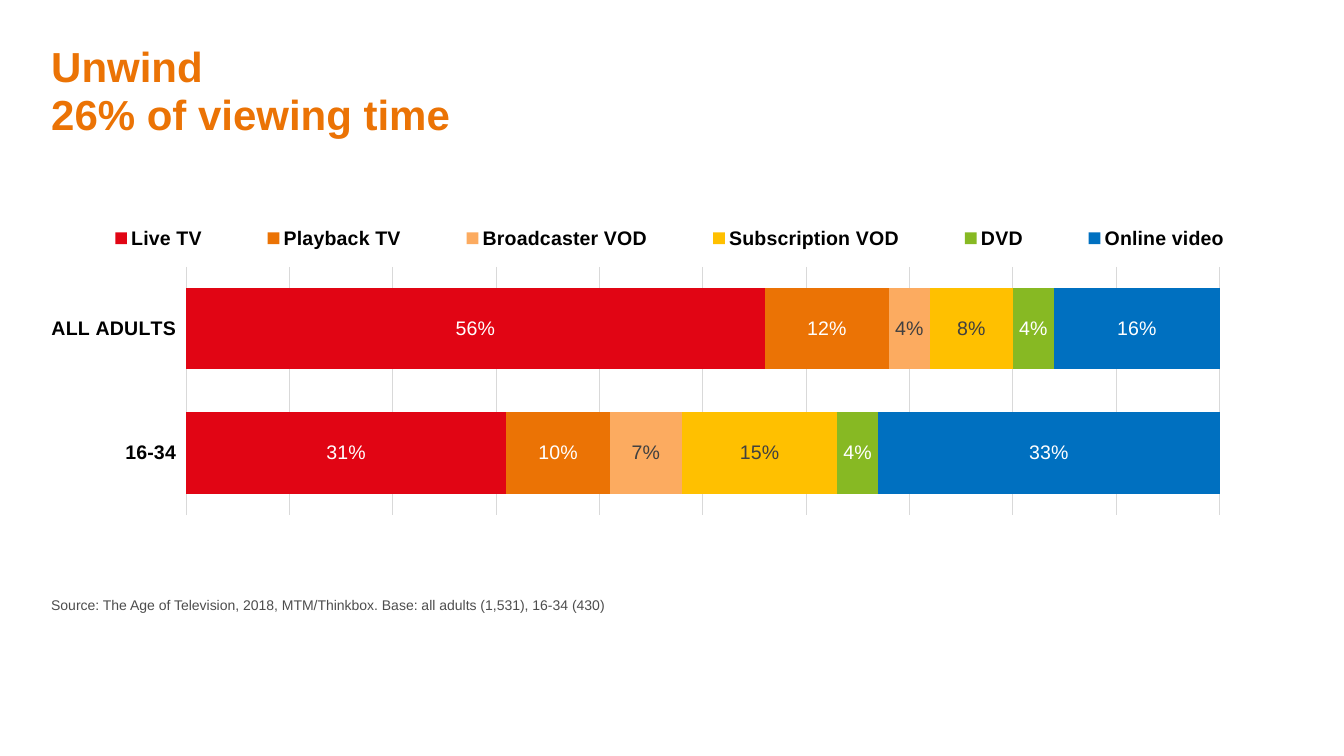
from dataclasses import dataclass

from lxml import etree
from pptx import Presentation
from pptx.chart.data import CategoryChartData
from pptx.dml.color import RGBColor
from pptx.enum.chart import XL_CHART_TYPE, XL_LEGEND_POSITION, XL_TICK_LABEL_POSITION, XL_TICK_MARK
from pptx.enum.text import MSO_ANCHOR
from pptx.oxml.ns import qn
from pptx.util import Inches, Pt

STACKED = XL_CHART_TYPE.BAR_STACKED_100
BOTTOM = XL_LEGEND_POSITION.BOTTOM
LOW = XL_TICK_LABEL_POSITION.LOW
NO_TICK = XL_TICK_MARK.NONE
TOP = MSO_ANCHOR.TOP


@dataclass(frozen=True)
class Theme:
    font: str = "Arial"
    title: str = "EB7305"
    source: str = "4D4D4D"
    black: str = "000000"
    white: str = "FFFFFF"
    dark: str = "404040"
    grid: str = "D9D9D9"
    title_size: int = 30
    chart_size: int = 14
    source_size: int = 10


THEME = Theme()
CATEGORIES = ["16-34", "ALL ADULTS"]
SERIES = [
    ("Live TV", (0.31, 0.56), "E10514", THEME.white),
    ("Playback TV", (0.10, 0.12), "EB7305", THEME.white),
    ("Broadcaster VOD", (0.07, 0.04), "FCAB60", THEME.dark),
    ("Subscription VOD", (0.15, 0.08), "FFC000", THEME.dark),
    ("DVD", (0.04, 0.04), "87B923", THEME.white),
    ("Online video", (0.33, 0.16), "0070C0", THEME.white),
]


def apply(obj, values):
    for name, value in values.items():
        setattr(obj, name, value)


class SlideBuilder:
    def __init__(self, prs, theme):
        self.theme = theme
        self.slide = prs.slides.add_slide(prs.slide_layouts[6])

    def style(self, font, size, color, bold=False):
        apply(font, {"name": self.theme.font, "size": Pt(size), "bold": bold})
        font.color.rgb = RGBColor.from_string(color)

    def line(self, fmt):
        fmt.line.color.rgb = RGBColor.from_string(self.theme.grid)
        fmt.line.width = Pt(0.75)

    def text(self, box, text, size, color, bold=False, spacing=1.0):
        sp = self.slide.shapes.add_textbox(*map(Inches, box))
        tf = sp.text_frame
        apply(tf, {"word_wrap": True, "vertical_anchor": TOP})
        p = tf.paragraphs[0]
        p.text = text
        p.line_spacing = spacing
        self.style(p.font, size, color, bold)
        for r in p.runs:
            self.style(r.font, size, color, bold)

    def layout(self, parent, index, box, target=None):
        for old in parent.findall(qn("c:layout")):
            parent.remove(old)
        layout = etree.Element(qn("c:layout"))
        manual = etree.SubElement(layout, qn("c:manualLayout"))
        values = {"layoutTarget": target} if target else {}
        values.update(xMode="edge", yMode="edge", **dict(zip("xywh", box)))
        for name, value in values.items():
            etree.SubElement(manual, qn(f"c:{name}")).set("val", str(value))
        parent.insert(index, layout)

    def chart(self, box, categories, series, plot_box, legend_box):
        theme = self.theme
        data = CategoryChartData(number_format="0%")
        data.categories = categories
        for name, values, *_ in series:
            data.add_series(name, values)
        chart = self.slide.shapes.add_chart(STACKED, *map(Inches, box), data).chart
        apply(chart, {"has_title": False, "has_legend": True})
        self.style(chart.font, theme.chart_size, theme.black)

        apply(chart.legend, {"position": BOTTOM, "include_in_layout": False})
        self.style(chart.legend.font, theme.chart_size, theme.black, True)
        self.layout(chart.legend._element, 1, legend_box)

        plot = chart.plots[0]
        apply(plot, {"gap_width": 53, "overlap": 100, "vary_by_categories": False})
        self.layout(chart._chartSpace.chart.plotArea, 0, plot_box, "inner")
        for ser, (_, _, fill, label) in zip(plot.series, series):
            ser.format.fill.solid()
            ser.format.fill.fore_color.rgb = RGBColor.from_string(fill)
            labels = ser.data_labels
            apply(labels, {"show_value": True, "number_format": "0%",
                           "number_format_is_linked": False})
            self.style(labels.font, theme.chart_size, label)

        axis = chart.category_axis
        apply(axis, {"major_tick_mark": NO_TICK, "minor_tick_mark": NO_TICK,
                     "tick_label_position": LOW})
        self.style(axis.tick_labels.font, theme.chart_size, theme.black, True)
        self.line(axis.format)

        axis = chart.value_axis
        apply(axis, {"visible": False, "has_major_gridlines": True,
                     "minimum_scale": 0, "maximum_scale": 1, "major_unit": 0.1})
        self.line(axis.major_gridlines.format)


def main():
    prs = Presentation()
    apply(prs, {"slide_width": Inches(13.33), "slide_height": Inches(7.5)})
    s = SlideBuilder(prs, THEME)
    s.text((0.41, 0.39, 12.4, 1.12), "Unwind\v26% of viewing time",
           THEME.title_size, THEME.title, True, 0.95)
    s.chart((0.51, 1.79, 12.22, 3.59), CATEGORIES, SERIES,
            (0.106, 0.239, 0.842, 0.686), (0, 0.11, 1, 0.1))
    s.text((0.41, 5.87, 12.4, 0.33),
           "Source: The Age of Television, 2018, MTM/Thinkbox. "
           "Base: all adults (1,531), 16-34 (430)",
           THEME.source_size, THEME.source)
    prs.save("out.pptx")


if __name__ == "__main__":
    main()
